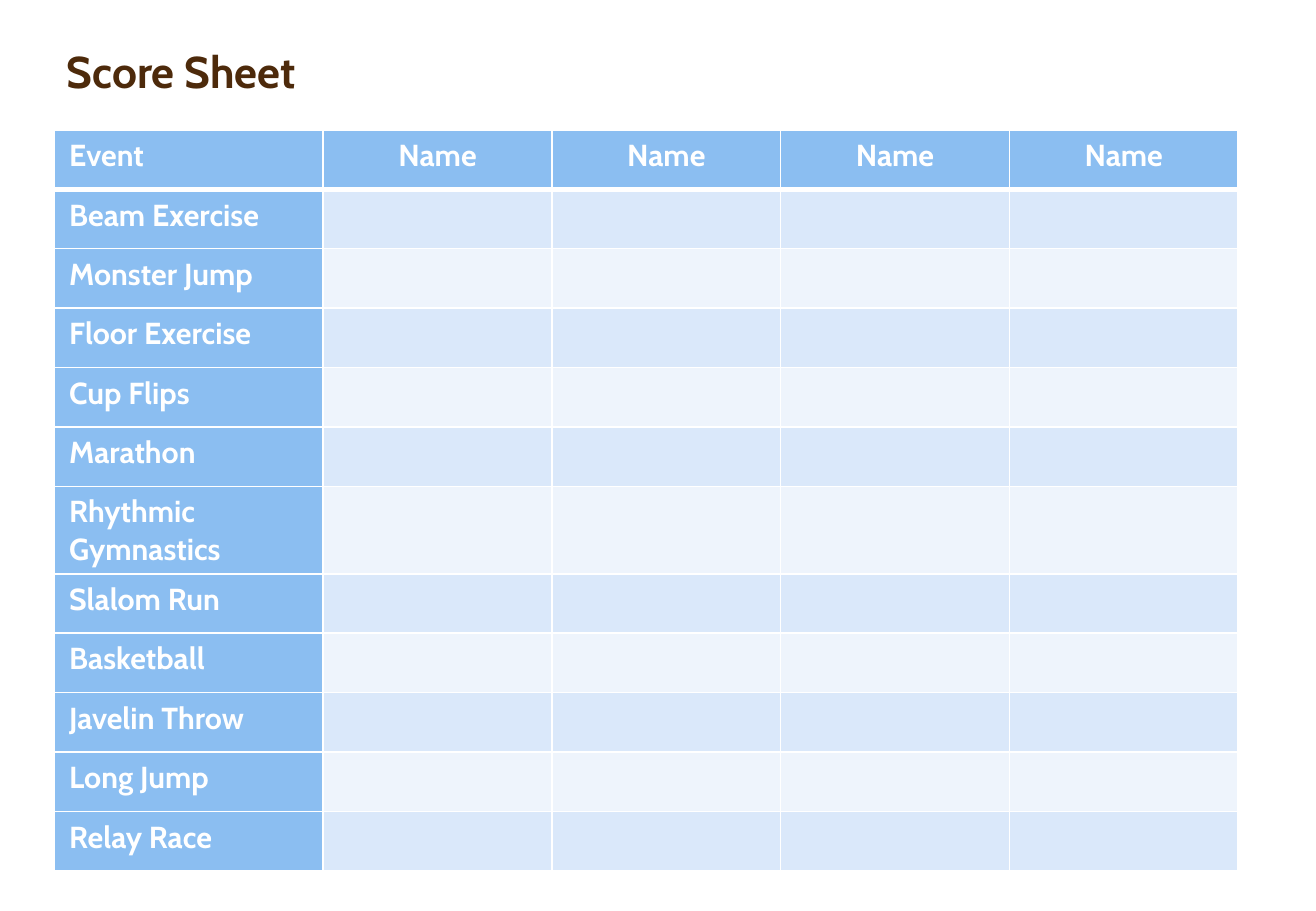
from lxml import etree
from pptx import Presentation
from pptx.dml.color import RGBColor
from pptx.enum.text import MSO_ANCHOR, PP_ALIGN
from pptx.oxml.ns import qn
from pptx.util import Inches, Pt

BOTTOM = MSO_ANCHOR.BOTTOM
LEFT, CENTER = PP_ALIGN.LEFT, PP_ALIGN.CENTER

FONT = "Cabin"
BROWN = RGBColor(0x4D, 0x2A, 0x0B)
WHITE = RGBColor(0xFF, 0xFF, 0xFF)
BLUE = RGBColor(0x8B, 0xBE, 0xF1)
BANDS = (RGBColor(0xDA, 0xE8, 0xFA), RGBColor(0xEE, 0xF4, 0xFC))

HEADER = ["Event"] + ["Name"] * 4
EVENTS = ["Beam Exercise", "Monster Jump", "Floor Exercise", "Cup Flips",
          "Marathon", "Rhythmic Gymnastics", "Slalom Run", "Basketball",
          "Javelin Throw", "Long Jump", "Relay Race"]
TALL_EVENT = "Rhythmic Gymnastics"
EVENT_WIDTH = 2.21
TALL_HEIGHT = 0.71


def add_text(p, text, size, color):
    r = p.add_run()
    r.text = text
    r.font.name = FONT
    r.font.size = Pt(size)
    r.font.bold = True
    r.font.color.rgb = color


def set_borders(cell, top, bottom):
    """Draw white cell borders; top and bottom widths are in points."""
    tc_pr = cell._tc.get_or_add_tcPr()
    sides = (("a:lnL", 1), ("a:lnR", 1), ("a:lnT", top), ("a:lnB", bottom))
    for i, (tag, width) in enumerate(sides):
        ln = etree.Element(qn(tag), w=str(Pt(width)))
        fill = etree.SubElement(ln, qn("a:solidFill"))
        etree.SubElement(fill, qn("a:srgbClr"), val=str(WHITE))
        tc_pr.insert(i, ln)


def add_title(s, left, top, width, height):
    sp = s.shapes.add_textbox(Inches(left), Inches(top), Inches(width), Inches(height))
    tf = sp.text_frame
    tf.word_wrap = True
    tf.vertical_anchor = BOTTOM
    p = tf.paragraphs[0]
    p.line_spacing = 0.9
    add_text(p, "Score Sheet", 26.3, BROWN)


def add_score_table(s, left, top, width, height):
    rows = [HEADER] + [[event] + [""] * 4 for event in EVENTS]
    table = s.shapes.add_table(len(rows), len(HEADER), Inches(left), Inches(top),
                               Inches(width), Inches(height)).table
    name_width = (width - EVENT_WIDTH) / (len(HEADER) - 1)
    row_height = (height - TALL_HEIGHT) / (len(rows) - 1)
    for j, column in enumerate(table.columns):
        column.width = Inches(name_width if j else EVENT_WIDTH)
    for i, texts in enumerate(rows):
        tall = texts[0] == TALL_EVENT
        table.rows[i].height = Inches(TALL_HEIGHT if tall else row_height)
        for j, text in enumerate(texts):
            cell = table.cell(i, j)
            cell.margin_left = cell.margin_right = Inches(0.12)
            cell.margin_top = cell.margin_bottom = Inches(0.06)
            cell.fill.solid()
            is_heading = i == 0 or j == 0
            cell.fill.fore_color.rgb = BLUE if is_heading else BANDS[(i - 1) % 2]
            set_borders(cell, top=3 if i == 1 else 1, bottom=3 if i == 0 else 1)
            if text:
                p = cell.text_frame.paragraphs[0]
                p.alignment = CENTER if j else LEFT
                add_text(p, text, 18, WHITE)


def main():
    prs = Presentation()
    prs.slide_width, prs.slide_height = Inches(10.83), Inches(7.5)
    s = prs.slides.add_slide(prs.slide_layouts[6])
    add_title(s, 0.45, 0.33, 5.38, 0.53)
    add_score_table(s, 0.45, 1.07, 9.74, 6.09)
    prs.save("out.pptx")


if __name__ == "__main__":
    main()
